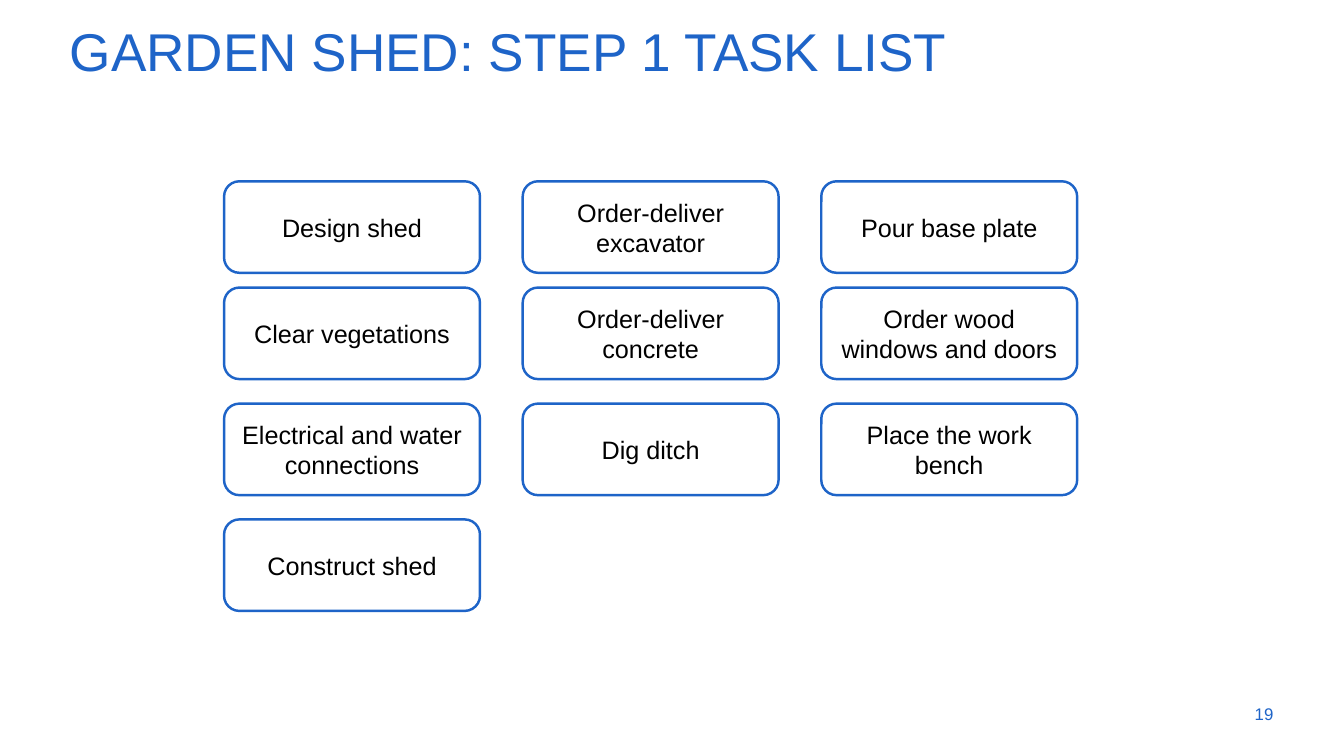
from pptx import Presentation
from pptx.dml.color import RGBColor
from pptx.enum.shapes import MSO_SHAPE
from pptx.enum.text import MSO_ANCHOR as ANCHOR, MSO_AUTO_SIZE as AUTO, PP_ALIGN as ALIGN
from pptx.util import Cm, Pt

COLORS = {"blue": "1E64C8", "black": "000000"}
FONT = "Arial"

# Tasks row by row
TASKS = [
    ["Design shed", "Order-deliver excavator", "Pour base plate"],
    ["Clear vegetations", "Order-deliver concrete", "Order wood windows and doors"],
    ["Electrical and water connections", "Dig ditch", "Place the work bench"],
    ["Construct shed"],
]
CARD_W, CARD_H = 9.17, 3.28
COL_PITCH = 10.7
ROW_OFFSETS = [0, 3.81, 7.97, 12.12]


def color(name):
    return RGBColor.from_string(COLORS[name])


def place(sp, left, top, width, height):
    sp.left, sp.top, sp.width, sp.height = Cm(left), Cm(top), Cm(width), Cm(height)


def write(sp, text, size, color_name, align, anchor):
    tf = sp.text_frame
    tf.word_wrap = True
    tf.auto_size = AUTO.NONE
    tf.vertical_anchor = anchor
    p = tf.paragraphs[0]
    p.alignment = align
    r = p.add_run()
    r.text = text
    r.font.name = FONT
    r.font.size = Pt(size)
    r.font.color.rgb = color(color_name)
    return tf


def add_title(slide, text, left, top, width, height):
    sp = slide.shapes.title
    place(sp, left, top, width, height)
    tf = write(sp, text, 54, "blue", ALIGN.LEFT, ANCHOR.BOTTOM)
    tf.margin_left = Cm(0.19)
    tf.paragraphs[0].line_spacing = 0.9


def add_page_number(slide, number, left, top, width, height):
    sp = slide.shapes.add_textbox(Cm(left), Cm(top), Cm(width), Cm(height))
    write(sp, str(number), 17.1, "blue", ALIGN.RIGHT, ANCHOR.MIDDLE)


def add_card(slide, text, left, top):
    sp = slide.shapes.add_shape(MSO_SHAPE.ROUNDED_RECTANGLE,
                                Cm(left), Cm(top), Cm(CARD_W), Cm(CARD_H))
    sp.shadow.inherit = False
    sp.fill.background()
    sp.line.color.rgb = color("blue")
    sp.line.width = Pt(2.5)
    write(sp, text, 25.6, "black", ALIGN.CENTER, ANCHOR.MIDDLE)


def add_task_grid(slide, tasks, left, top):
    for offset, row in zip(ROW_OFFSETS, tasks):
        for col, text in enumerate(row):
            add_card(slide, text, left + col * COL_PITCH, top + offset)


def main():
    prs = Presentation()
    prs.slide_width, prs.slide_height = Cm(48.16), Cm(27.1)
    slide = prs.slides.add_slide(prs.slide_layouts[5])

    # Heading, task cards and page number
    add_title(slide, "GARDEN SHED: STEP 1 TASK LIST", 2.31, 0.71, 45.85, 2.39)
    add_task_grid(slide, TASKS, 8.03, 6.5)
    add_page_number(slide, 19, 43.31, 24.87, 2.57, 1.45)

    prs.save("out.pptx")


if __name__ == "__main__":
    main()
